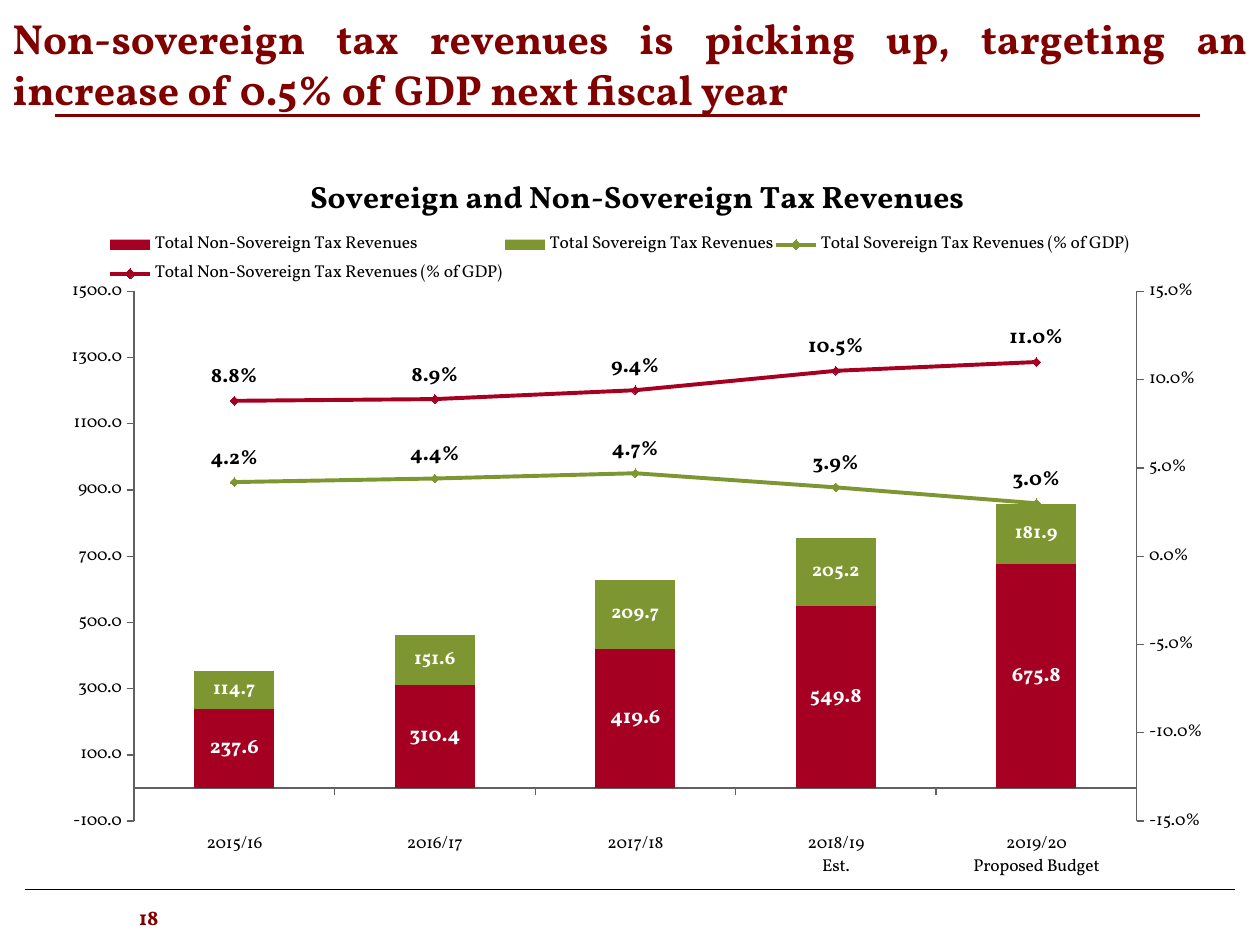
from copy import deepcopy

from lxml.etree import SubElement
from pptx import Presentation
from pptx.chart.data import CategoryChartData
from pptx.dml.color import RGBColor
from pptx.enum.chart import XL_CHART_TYPE as CHART
from pptx.enum.chart import XL_LABEL_POSITION as LABEL
from pptx.enum.chart import XL_LEGEND_POSITION as LEGEND
from pptx.enum.chart import XL_MARKER_STYLE as MARKER
from pptx.enum.chart import XL_TICK_LABEL_POSITION as TICK_LABEL
from pptx.enum.chart import XL_TICK_MARK as TICK
from pptx.enum.shapes import MSO_CONNECTOR
from pptx.enum.text import MSO_ANCHOR, MSO_AUTO_SIZE, PP_ALIGN
from pptx.oxml import parse_xml
from pptx.oxml.ns import nsdecls, qn
from pptx.util import Cm, Pt

MAROON = RGBColor(0x80, 0x00, 0x00)
CRIMSON = RGBColor(0xA5, 0x00, 0x21)
OLIVE = RGBColor(0x7E, 0x96, 0x32)
WHITE = RGBColor(0xFF, 0xFF, 0xFF)
BLACK = RGBColor(0x00, 0x00, 0x00)
GREY = RGBColor(0x60, 0x60, 0x60)

YEARS = ["2015/16", "2016/17", "2017/18", "2018/19\nEst.",
         "2019/20\nProposed Budget"]
# name, values, colour, label size
AMOUNTS = [
    ("Total Non-Sovereign Tax Revenues",
     [237.6, 310.4, 419.6, 549.8, 675.8], CRIMSON, 12),
    ("Total Sovereign Tax Revenues",
     [114.7, 151.6, 209.7, 205.2, 181.9], OLIVE, 11),
]
GDP_SHARES = [
    ("Total Sovereign Tax Revenues (% of GDP)",
     [0.042, 0.044, 0.047, 0.039, 0.03], OLIVE, 12),
    ("Total Non-Sovereign Tax Revenues (% of GDP)",
     [0.088, 0.089, 0.094, 0.105, 0.11], CRIMSON, 12),
]


def make_layout(parent, x, y, w, h, inner=False):
    """Return a layout in fractions of the chart area, dropping the old one."""
    for old in parent.findall(qn("c:layout")):
        parent.remove(old)
    layout = parse_xml(f"<c:layout {nsdecls('c')}><c:manualLayout/></c:layout>")
    manual = layout[0]
    if inner:
        SubElement(manual, qn("c:layoutTarget"), val="inner")
    for tag in ("xMode", "yMode"):
        SubElement(manual, qn(f"c:{tag}"), val="edge")
    for tag, value in zip("xywh", (x, y, w, h)):
        SubElement(manual, qn(f"c:{tag}"), val=str(value))
    return layout


def move_to_right_axis(chart, first):
    """Turn the series from index first on into lines on a second axis."""
    bar = chart.plots[0]
    series = [s._element for s in bar.series][first:]
    line = parse_xml(
        f'<c:lineChart {nsdecls("c")}><c:grouping val="standard"/>'
        '<c:varyColors val="0"/><c:marker val="1"/>'
        '<c:axId val="5001"/><c:axId val="5002"/></c:lineChart>')
    for ser in series:
        for tag in ser.findall(qn("c:invertIfNegative")):
            ser.remove(tag)
        line.find(qn("c:marker")).addprevious(ser)
    bar._element.addnext(line)

    cat, val = chart.category_axis._element, chart.value_axis._element
    right, hidden = deepcopy(val), deepcopy(cat)
    for axis, own, other in ((right, "5002", "5001"), (hidden, "5001", "5002")):
        axis.find(qn("c:axId")).set("val", own)
        axis.find(qn("c:crossAx")).set("val", other)
    hidden.find(qn("c:delete")).set("val", "1")
    right.find(qn("c:axPos")).set("val", "r")
    right.find(qn("c:crosses")).set("val", "max")
    right.find(qn("c:numFmt")).set("formatCode", "0.0%")
    scaling = right.find(qn("c:scaling"))
    scaling.find(qn("c:max")).set("val", "0.15")
    scaling.find(qn("c:min")).set("val", "-0.15")
    right.find(qn("c:majorUnit")).set("val", "0.05")
    val.addnext(right)
    right.addnext(hidden)


class SlideBuilder:
    font = "Vollkorn"

    def __init__(self, prs):
        self.slide = prs.slides.add_slide(prs.slide_layouts[5])

    def style(self, font, size, color, bold=False):
        font.name, font.size, font.bold = self.font, Pt(size), bold
        font.color.rgb = color

    def add_text(self, tf, text, size, align):
        tf.word_wrap = True
        tf.auto_size = MSO_AUTO_SIZE.NONE
        p = tf.paragraphs[0]
        p.alignment = align
        r = p.add_run()
        r.text = text
        self.style(r.font, size, MAROON, True)

    def title(self, text, x, y, w, h):
        sp = self.slide.shapes.title
        sp.left, sp.top, sp.width, sp.height = Cm(x), Cm(y), Cm(w), Cm(h)
        sp.text_frame.vertical_anchor = MSO_ANCHOR.TOP
        self.add_text(sp.text_frame, text, 24, PP_ALIGN.JUSTIFY)

    def page_number(self, text, x, y, w, h):
        tf = self.slide.shapes.add_textbox(Cm(x), Cm(y), Cm(w), Cm(h)).text_frame
        tf.margin_left = tf.margin_right = tf.margin_top = tf.margin_bottom = 0
        tf.vertical_anchor = MSO_ANCHOR.BOTTOM
        self.add_text(tf, text, 12, PP_ALIGN.RIGHT)

    def rule(self, x1, x2, y, width, color):
        line = self.slide.shapes.add_connector(
            MSO_CONNECTOR.STRAIGHT, Cm(x1), Cm(y), Cm(x2), Cm(y))
        line.line.color.rgb, line.line.width = color, Pt(width)
        SubElement(line._element.spPr, qn("a:effectLst"))

    def axis(self, axis):
        axis.has_major_gridlines = False
        axis.major_tick_mark, axis.minor_tick_mark = TICK.OUTSIDE, TICK.NONE
        axis.format.line.color.rgb = GREY
        axis.format.line.width = Pt(0.75)

    def labels(self, series, size, color, fmt, position):
        labels = series.data_labels
        labels.show_value = True
        labels.number_format, labels.number_format_is_linked = fmt, False
        labels.position = position
        self.style(labels.font, size, color, True)

    def revenue_chart(self, title, x, y, w, h):
        data = CategoryChartData()
        data.categories = YEARS
        for specs, fmt in ((AMOUNTS, "0.0"), (GDP_SHARES, "0.0%")):
            for name, values, *_ in specs:
                data.add_series(name, values, fmt)
        chart = self.slide.shapes.add_chart(
            CHART.COLUMN_STACKED, Cm(x), Cm(y), Cm(w), Cm(h), data).chart
        self.style(chart.font, 10, BLACK)
        r = chart.chart_title.text_frame.paragraphs[0].add_run()
        r.text = title
        self.style(r.font, 18, BLACK, True)

        chart.has_legend = True
        chart.legend.position = LEGEND.TOP
        chart.legend.include_in_layout = False
        legend = chart.legend._element
        box = make_layout(legend, 0.05, 0.11, 0.87, 0.09)
        legend.find(qn("c:legendPos")).addnext(box)
        plot_area = chart.plots[0]._element.getparent()
        plot_area.insert(0, make_layout(plot_area, 0.073, 0.2, 0.851, 0.743, True))

        cat, val = chart.category_axis, chart.value_axis
        self.axis(cat)
        self.axis(val)
        cat.tick_label_position = TICK_LABEL.LOW
        val.minimum_scale, val.maximum_scale, val.major_unit = -100, 1500, 200
        val.tick_labels.number_format = "0.0"
        val.tick_labels.number_format_is_linked = False
        move_to_right_axis(chart, len(AMOUNTS))

        bars, lines = chart.plots
        bars.gap_width, bars.overlap = 150, 100
        bars.vary_by_categories = False
        for series, (_, _, color, size) in zip(bars.series, AMOUNTS):
            series.format.fill.solid()
            series.format.fill.fore_color.rgb = color
            self.labels(series, size, WHITE, "0.0", LABEL.CENTER)
        for series, (_, _, color, size) in zip(lines.series, GDP_SHARES):
            series.smooth = False
            series.format.line.color.rgb = color
            series.format.line.width = Pt(2.25)
            series.marker.style, series.marker.size = MARKER.DIAMOND, 5
            series.marker.format.fill.solid()
            series.marker.format.fill.fore_color.rgb = color
            series.marker.format.line.color.rgb = color
            self.labels(series, size, BLACK, "0.0%", LABEL.ABOVE)


def main():
    prs = Presentation()
    prs.slide_width, prs.slide_height = Cm(25.4), Cm(19.05)
    s = SlideBuilder(prs)
    s.rule(1.1, 24.2, 2.33, 2, MAROON)
    s.rule(0.5, 24.9, 17.93, 0.75, BLACK)
    s.page_number("18", 1.1, 18.14, 2.1, 0.6)
    s.title("Non-sovereign tax revenues is picking up, targeting an increase "
            "of 0.5% of GDP next fiscal year", 0, 0.13, 25.4, 2.3)
    s.revenue_chart("Sovereign and Non-Sovereign Tax Revenues",
                    0.97, 3, 23.75, 14.73)
    prs.save("out.pptx")


if __name__ == "__main__":
    main()
